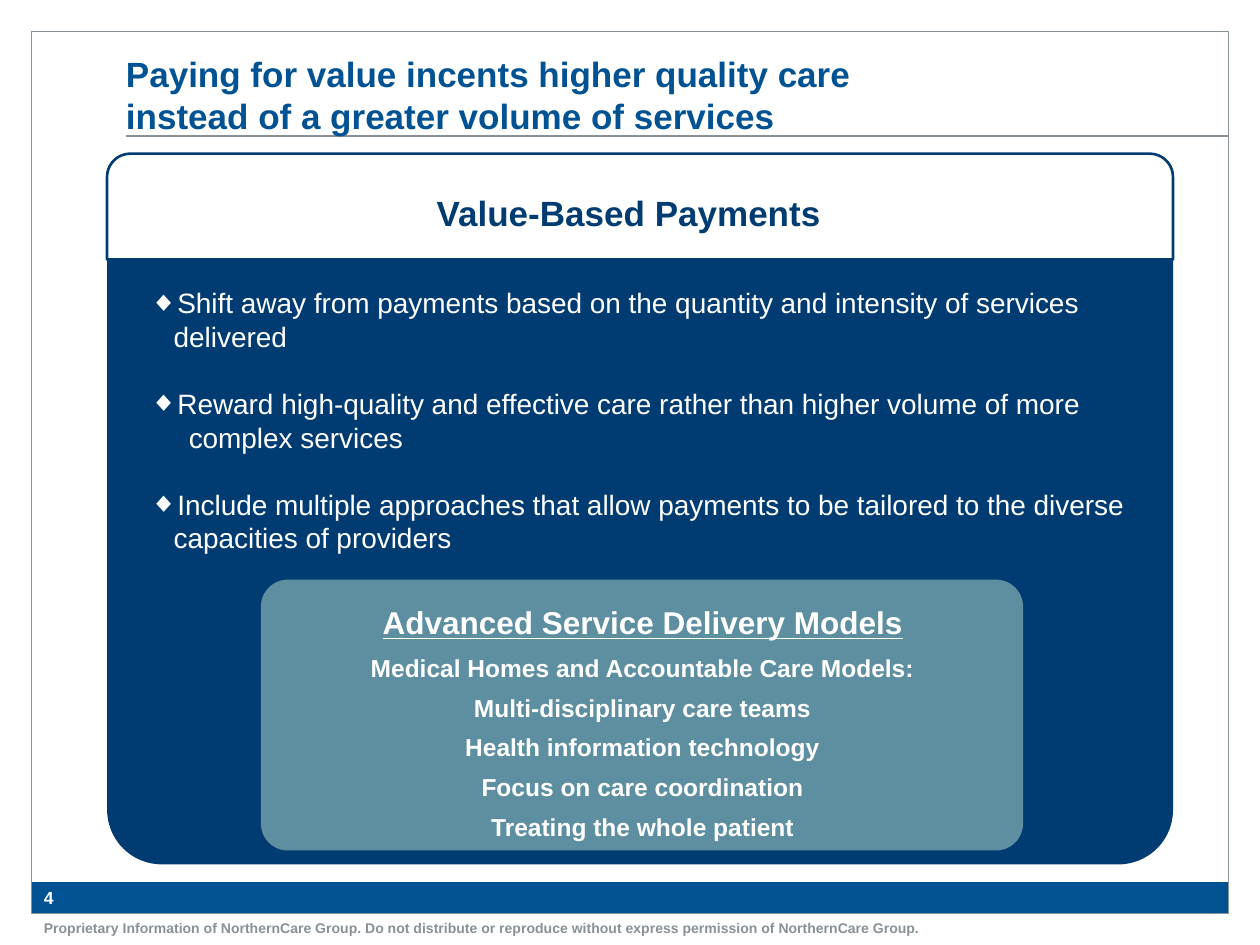
from dataclasses import dataclass

from lxml import etree
from pptx import Presentation
from pptx.dml.color import RGBColor
from pptx.enum.shapes import MSO_CONNECTOR, MSO_SHAPE
from pptx.enum.text import MSO_ANCHOR, PP_ALIGN
from pptx.oxml.ns import qn
from pptx.util import Inches, Pt

LEFT, CENTER = PP_ALIGN.LEFT, PP_ALIGN.CENTER
TOP, MIDDLE, BOTTOM = MSO_ANCHOR.TOP, MSO_ANCHOR.MIDDLE, MSO_ANCHOR.BOTTOM
RECT, ROUND = MSO_SHAPE.RECTANGLE, MSO_SHAPE.ROUNDED_RECTANGLE
ROUND_TOP = MSO_SHAPE.ROUND_2_SAME_RECTANGLE
STRAIGHT = MSO_CONNECTOR.STRAIGHT

COLORS = {"blue": "005293", "navy": "003C71", "teal": "5D8FA1", "gray": "879196", "white": "FFFFFF"}
FONT = "Arial"
INSETS = (0.1, 0.05, 0.1, 0.05)


@dataclass
class Panel:
    kind: int
    box: tuple[float, float, float, float]
    fill: str | None = None
    line: str | None = None
    width: float = 1
    adjust: tuple[float, ...] = ()
    rotation: float = 0


@dataclass
class Label:
    box: tuple[float, float, float, float]
    lines: tuple[str, ...]
    size: float
    color: str
    bold: bool = True
    underline: bool = False
    align: int = LEFT
    anchor: int = TOP
    insets: tuple[float, float, float, float] = INSETS
    after: float = 0


PANELS = [
    Panel(RECT, (0.25, 7, 9.5, 0.25), "blue"),
    Panel(RECT, (0.25, 0.25, 9.5, 7), line="gray"),
    Panel(ROUND_TOP, (0.85, 1.22, 8.46, 0.84), "white", "navy", 1.5, (0.22, 0)),
    Panel(ROUND_TOP, (0.85, 2.05, 8.46, 4.81), "navy", adjust=(0.09, 0), rotation=180),
    Panel(ROUND, (2.07, 4.6, 6.05, 2.15), "teal", adjust=(0.1,)),
]

LABELS = [
    Label((0.25, 7.25, 9.5, 0.25),
          ("Proprietary Information of NorthernCare Group. Do not distribute or reproduce "
           "without express permission of NorthernCare Group.",), 8, "gray"),
    Label((0.25, 7, 0.67, 0.25), ("4",), 10, "white", anchor=MIDDLE, insets=(0.1, 0, 0, 0)),
    Label((1, 0.25, 6, 0.83),
          ("Paying for value incents higher quality care instead of a greater volume of services",),
          20, "blue", anchor=BOTTOM, insets=(0, 0, 0, 0)),
    Label((2.07, 1.47, 5.84, 0.44), ("Value-Based Payments",), 20, "navy", align=CENTER),
    Label((2.29, 4.74, 5.62, 0.4), ("Advanced Service Delivery Models",), 18, "white",
          underline=True, align=CENTER),
    Label((2.29, 5.13, 5.62, 1.62),
          ("Medical Homes and Accountable Care Models:", "Multi-disciplinary care teams",
           "Health information technology", "Focus on care coordination",
           "Treating the whole patient"), 14, "white", align=CENTER, after=6),
]

POINTS = Label(
    (1.09, 2.22, 8, 2.26),
    ("Shift away from payments based on the quantity and intensity of services delivered",
     "Reward high-quality and effective care rather than higher volume of more",
     "complex services",
     "Include multiple approaches that allow payments to be tailored to the diverse "
     "capacities of providers"), 16, "white", bold=False)
CONTINUATION = 2
POINT_GAP = 19.2


def rgb(name: str) -> RGBColor:
    """Return the named colour."""
    return RGBColor.from_string(COLORS[name])


def add_panel(s, panel: Panel) -> None:
    """Draw a filled or outlined preset shape."""
    sp = s.shapes.add_shape(panel.kind, *map(Inches, panel.box))
    sp.shadow.inherit = False
    sp.rotation = panel.rotation
    for i, value in enumerate(panel.adjust):
        sp.adjustments[i] = value
    if panel.fill:
        sp.fill.solid()
        sp.fill.fore_color.rgb = rgb(panel.fill)
    else:
        sp.fill.background()
    if panel.line:
        sp.line.color.rgb = rgb(panel.line)
        sp.line.width = Pt(panel.width)
    else:
        sp.line.fill.background()


def add_label(s, label: Label):
    """Add a text box and return its text frame."""
    tf = s.shapes.add_textbox(*map(Inches, label.box)).text_frame
    tf.word_wrap = True
    tf.vertical_anchor = label.anchor
    tf.margin_left, tf.margin_top, tf.margin_right, tf.margin_bottom = map(Inches, label.insets)
    tf.text = "\n".join(label.lines)
    for p in tf.paragraphs:
        p.alignment = label.align
        p.space_after = Pt(label.after)
        for r in p.runs:
            r.font.name = FONT
            r.font.size = Pt(label.size)
            r.font.bold = label.bold
            r.font.underline = label.underline
            r.font.color.rgb = rgb(label.color)
    return tf


def add_points(s, label: Label) -> None:
    """Add the diamond-bulleted points with one continuation line."""
    for i, p in enumerate(add_label(s, label).paragraphs):
        pPr = p._p.get_or_add_pPr()
        if i == CONTINUATION:
            pPr.set("marL", str(Inches(0.31)))
            continue
        if i:
            p.space_before = Pt(POINT_GAP)
        pPr.set("marL", str(Inches(0.19)))
        pPr.set("indent", str(Inches(-0.19)))
        color = etree.SubElement(pPr, qn("a:buClr"))
        etree.SubElement(color, qn("a:srgbClr"), val=COLORS["white"])
        etree.SubElement(pPr, qn("a:buFont"), typeface=FONT)
        etree.SubElement(pPr, qn("a:buChar"), char="◆")


def add_rule(s) -> None:
    """Draw the line under the title."""
    rule = s.shapes.add_connector(STRAIGHT, Inches(9.75), Inches(1.08), Inches(1), Inches(1.08))
    rule.line.color.rgb = rgb("gray")
    rule.line.width = Pt(0.75)
    etree.SubElement(rule._element.spPr, qn("a:effectLst"))


def main() -> None:
    """Build the slide and save it."""
    prs = Presentation()
    prs.slide_width, prs.slide_height = Inches(10), Inches(7.5)
    s = prs.slides.add_slide(prs.slide_layouts[6])
    for panel in PANELS:
        add_panel(s, panel)
    add_rule(s)
    for label in LABELS:
        add_label(s, label)
    add_points(s, POINTS)
    prs.save("out.pptx")


if __name__ == "__main__":
    main()
